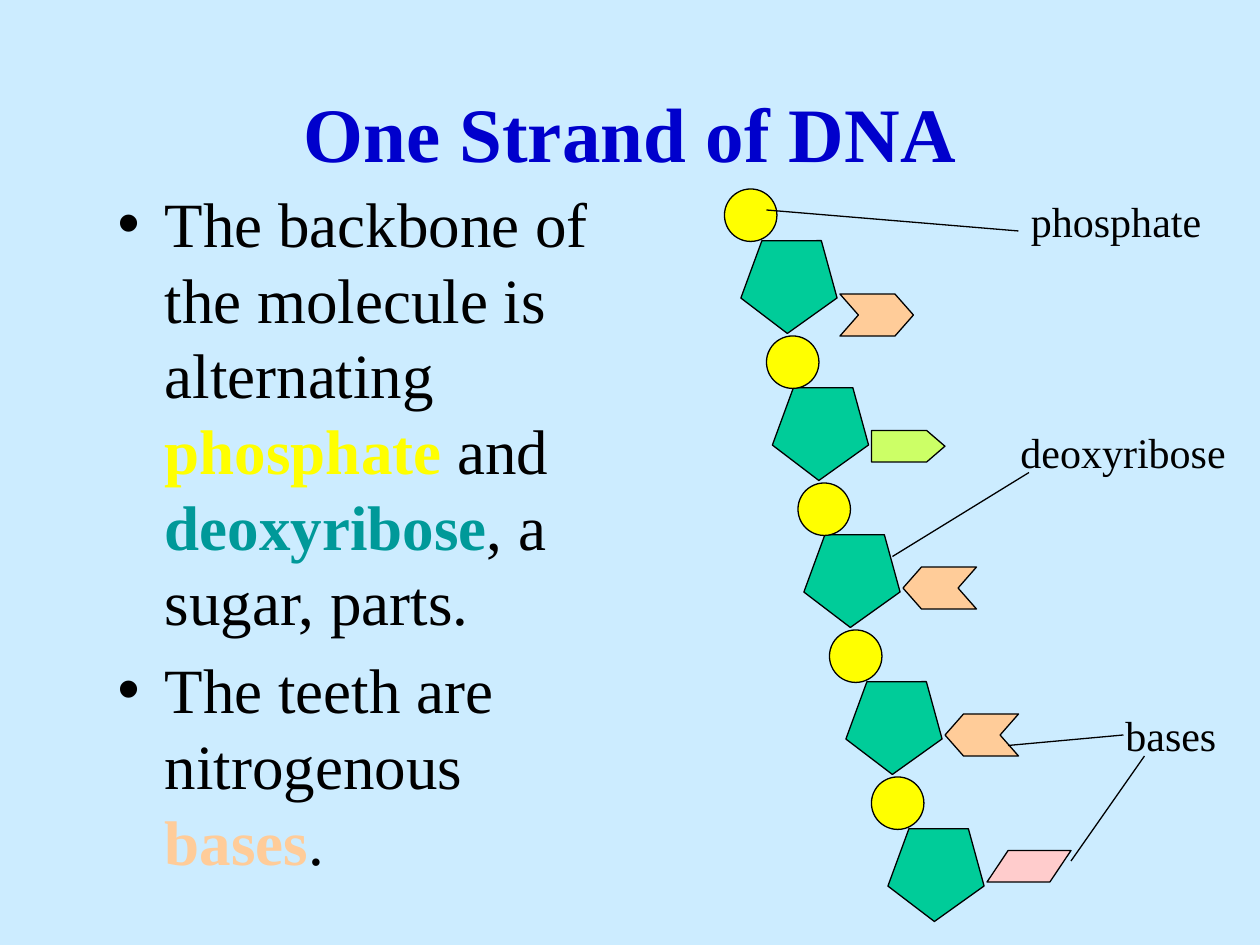
from lxml.etree import SubElement
from pptx import Presentation
from pptx.dml.color import RGBColor
from pptx.enum.shapes import MSO_CONNECTOR, MSO_SHAPE
from pptx.enum.text import MSO_ANCHOR, MSO_AUTO_SIZE, PP_ALIGN
from pptx.oxml.ns import qn
from pptx.util import Pt

PX = 9525
BLACK = "000000"
YELLOW = "FFFF00"
PEACH = "FFCC99"


def color(value):
    return RGBColor.from_string(value)


def lengths(*values):
    return [value * PX for value in values]


def assign(target, values):
    for name, value in values.items():
        setattr(target, name, value)


class SlideBuilder:
    font = "Times New Roman"
    line_width = Pt(0.75)

    def __init__(self, page, background):
        self.page = page
        page.background.fill.solid()
        page.background.fill.fore_color.rgb = color(background)

    def span(self, para, text, size, tint=BLACK, bold=False):
        span = para.add_run()
        span.text = text
        assign(span.font, {"name": self.font, "size": Pt(size), "bold": bold})
        span.font.color.rgb = color(tint)

    def place(self, holder, bounds, frame_format):
        assign(holder, dict(zip(("left", "top", "width", "height"), lengths(*bounds))))
        assign(holder.text_frame, {"word_wrap": True, "auto_size": MSO_AUTO_SIZE.NONE, **frame_format})
        return holder.text_frame

    def title(self, bounds, text):
        frame = self.place(self.page.shapes.title, bounds, {"vertical_anchor": MSO_ANCHOR.MIDDLE})
        para = frame.paragraphs[0]
        para.alignment = PP_ALIGN.CENTER
        self.span(para, text, 44, "0000CC", True)

    def bullets(self, bounds, items):
        frame = self.place(self.page.placeholders[1], bounds, {"vertical_anchor": MSO_ANCHOR.TOP})
        for index, spans in enumerate(items):
            para = frame.add_paragraph() if index else frame.paragraphs[0]
            properties = para._p.get_or_add_pPr()
            properties.set("marL", str(36 * PX))
            properties.set("indent", str(-36 * PX))
            SubElement(properties, qn("a:buChar"), char="•")
            para.space_before = Pt(7.2 if index else 0)
            for text, *emphasis in spans:
                self.span(para, text, 36, *emphasis)

    def shape(self, kind, bounds, fill, rotation=0, adjustment=None):
        shape = self.page.shapes.add_shape(kind, *lengths(*bounds))
        shape.shadow.inherit = False
        shape.rotation = rotation
        shape.fill.solid()
        shape.fill.fore_color.rgb = color(fill)
        self.outline(shape.line)
        if adjustment is not None:
            shape.adjustments[0] = adjustment

    def outline(self, line):
        line.color.rgb = color(BLACK)
        line.width = self.line_width

    def pointer(self, *ends):
        pointer = self.page.shapes.add_connector(MSO_CONNECTOR.STRAIGHT, *lengths(*ends))
        self.outline(pointer.line)
        SubElement(pointer._element.spPr, qn("a:effectLst"))

    def label(self, bounds, text):
        box = self.page.shapes.add_textbox(*lengths(*bounds))
        assign(box.text_frame, {"word_wrap": True, "auto_size": MSO_AUTO_SIZE.SHAPE_TO_FIT_TEXT})
        self.span(box.text_frame.paragraphs[0], text, 24)


def main():
    deck = Presentation()
    assign(deck, dict(zip(("slide_width", "slide_height"), lengths(960, 720))))
    builder = SlideBuilder(deck.slides.add_slide(deck.slide_layouts[1]), "CCECFF")

    builder.title((72, 40, 816, 120), "One Strand of DNA")
    builder.bullets((80, 136, 408, 496), [
        [("The backbone of the molecule is alternating ",), ("phosphate", YELLOW, True), (" and ",),
         ("deoxyribose", "009999", True), (", a sugar, parts.",)],
        [("The teeth are nitrogenous ",), ("bases", PEACH, True), (".",)],
    ])

    row_pitch = 112
    for row, left in enumerate((568, 592, 616, 648, 680)):
        builder.shape(MSO_SHAPE.REGULAR_PENTAGON, (left, 176 + row * row_pitch, 72, 72), "00CC99", 37.3)
    for row, left in enumerate((552, 584, 608, 632, 664)):
        builder.shape(MSO_SHAPE.OVAL, (left, 144 + row * row_pitch, 40, 40), YELLOW)

    for left, top, rotation in ((640, 224, 0), (688, 432, 180), (720, 544, 180)):
        builder.shape(MSO_SHAPE.CHEVRON, (left, top, 56, 32), PEACH, rotation, 0.44)
    builder.shape(MSO_SHAPE.PENTAGON, (664, 328, 56, 24), "CCFF66", adjustment=0.58)
    builder.shape(MSO_SHAPE.PARALLELOGRAM, (752, 648, 64, 24), "FFCCCC", adjustment=0.67)

    for ends in ((584, 160, 776, 176), (680, 424, 784, 360), (816, 656, 872, 576), (768, 568, 856, 560)):
        builder.pointer(*ends)
    builder.label((776, 144, 152, 48), "phosphate")
    builder.label((768, 320, 180, 48), "deoxyribose")
    builder.label((848, 536, 94, 48), "bases")

    deck.save("out.pptx")


if __name__ == "__main__":
    main()
